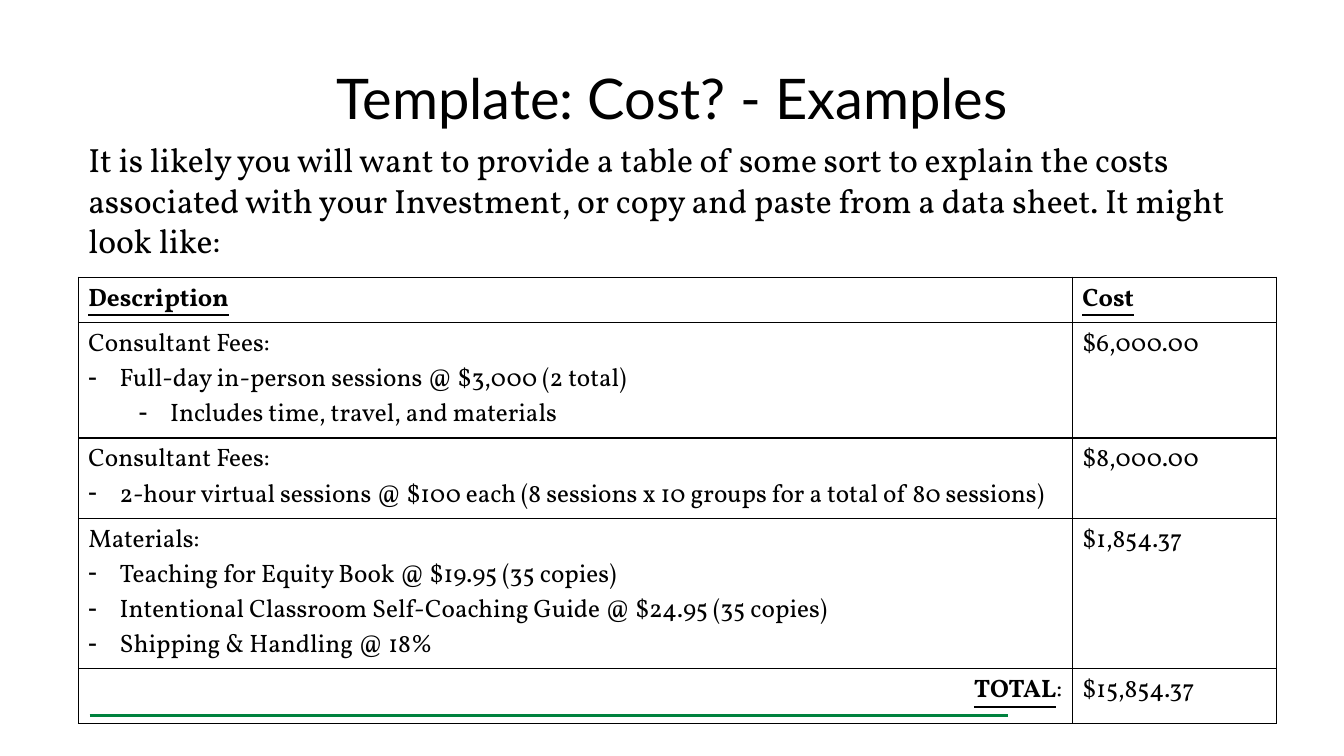
from lxml.etree import SubElement as Sub
from pptx import Presentation
from pptx.dml.color import RGBColor
from pptx.enum.shapes import MSO_CONNECTOR as Link
from pptx.enum.text import MSO_ANCHOR as Anchor, MSO_AUTO_SIZE as Fit, PP_ALIGN as Align
from pptx.oxml.ns import qn
from pptx.util import Inches, Pt

BLACK = RGBColor(0x00, 0x00, 0x00)
GREEN = RGBColor(0x00, 0x82, 0x3E)

COSTS = [
    ("$6,000.00", [
        ("Consultant Fees:", 0),
        ("Full-day in-person sessions @ $3,000 (2 total)", 1),
        ("Includes time, travel, and materials", 2)]),
    ("$8,000.00", [
        ("Consultant Fees:", 0),
        ("2-hour virtual sessions @ $100 each (8 sessions x 10 groups for a total of 80 sessions)", 1)]),
    ("$1,854.37", [
        ("Materials:", 0),
        ("Teaching for Equity Book @ $19.95 (35 copies)", 1),
        ("Intentional Classroom Self-Coaching Guide @ $24.95 (35 copies)", 1),
        ("Shipping & Handling @ 18%", 1)]),
]


def write(para, text, size=18, face="Vollkorn", color=BLACK, strong=False, align=None, level=0):
    if level:
        props = para._p.get_or_add_pPr()
        props.set("marL", str(Inches(0.31 + 0.5 * (level - 1))))
        props.set("indent", str(-Inches(0.31)))
        Sub(props, qn("a:buChar")).set("char", "-")
        para.level = level - 1
    if align is not None:
        para.alignment = align
    run = para.add_run()
    run.text = text
    font = run.font
    font.size = Pt(size)
    font.name = face
    font.color.rgb = color
    font.bold = strong
    font.underline = strong


class Page:
    cols, rows = 120, 90

    def __init__(self, deck):
        self.wide, self.high = deck.slide_width, deck.slide_height
        self.slide = deck.slides.add_slide(deck.slide_layouts[5])

    def x(self, n):
        return round(self.wide * n / self.cols)

    def y(self, n):
        return round(self.high * n / self.rows)

    def place(self, left, top, width, height):
        return self.x(left), self.y(top), self.x(width), self.y(height)

    def title(self, text, *area):
        box = self.slide.shapes.title
        box.left, box.top, box.width, box.height = self.place(*area)
        box.text_frame.vertical_anchor = Anchor.MIDDLE
        write(box.text_frame.paragraphs[0], text, size=40, face="Lato", align=Align.CENTER)

    def text(self, text, *area):
        frame = self.slide.shapes.add_textbox(*self.place(*area)).text_frame
        frame.word_wrap = True
        frame.auto_size = Fit.NONE
        write(frame.paragraphs[0], text, size=24)

    def line(self, left, right, top):
        rule = self.slide.shapes.add_connector(
            Link.STRAIGHT, self.x(left), self.y(top), self.x(right), self.y(top))
        rule.line.color.rgb = GREEN
        rule.line.width = Pt(2.25)
        Sub(rule._element.spPr, qn("a:effectLst"))

    def edge(self, cell):
        props = cell._tc.get_or_add_tcPr()
        for side in ("lnL", "lnR", "lnT", "lnB"):
            line = Sub(props, qn("a:" + side), w=str(Pt(1)))
            fill = Sub(line, qn("a:solidFill"))
            Sub(fill, qn("a:srgbClr"), val=str(BLACK))
        cell.fill.background()

    def table(self, left, top, widths, heights):
        area = self.place(left, top, sum(widths), sum(heights))
        grid = self.slide.shapes.add_table(len(heights), len(widths), *area).table
        grid.first_row = grid.horz_banding = False
        for col, width in zip(grid.columns, widths):
            col.width = self.x(width)
        for row, height in zip(grid.rows, heights):
            row.height = self.y(height)
        for cell in grid.iter_cells():
            self.edge(cell)
        return grid


def main():
    deck = Presentation()
    deck.slide_width, deck.slide_height = Inches(13.33), Inches(7.5)
    page = Page(deck)
    page.line(8, 90, 85.2)
    page.title("Template: Cost? - Examples", 6, 4, 108, 15)
    page.text("It is likely you will want to provide a table of some sort to explain the costs "
              "associated with your Investment, or copy and paste from a data sheet. "
              "It might look like:", 7, 16, 107, 17)
    grid = page.table(7, 33, [88.75, 18.25], [4.1, 9.5, 6.7, 12.4, 6.5])

    def first(row, col):
        return grid.cell(row, col).text_frame.paragraphs[0]

    for col, head in enumerate(("Description", "Cost")):
        write(first(0, col), head, strong=True)
    for row, (cost, items) in enumerate(COSTS, 1):
        write(first(row, 1), cost)
        frame = grid.cell(row, 0).text_frame
        for n, (item, level) in enumerate(items):
            para = frame.add_paragraph() if n else frame.paragraphs[0]
            write(para, item, level=level)
    total = first(4, 0)
    write(total, "TOTAL", strong=True, align=Align.RIGHT)
    write(total, ":")
    write(first(4, 1), "$15,854.37")
    deck.save("out.pptx")


if __name__ == "__main__":
    main()
